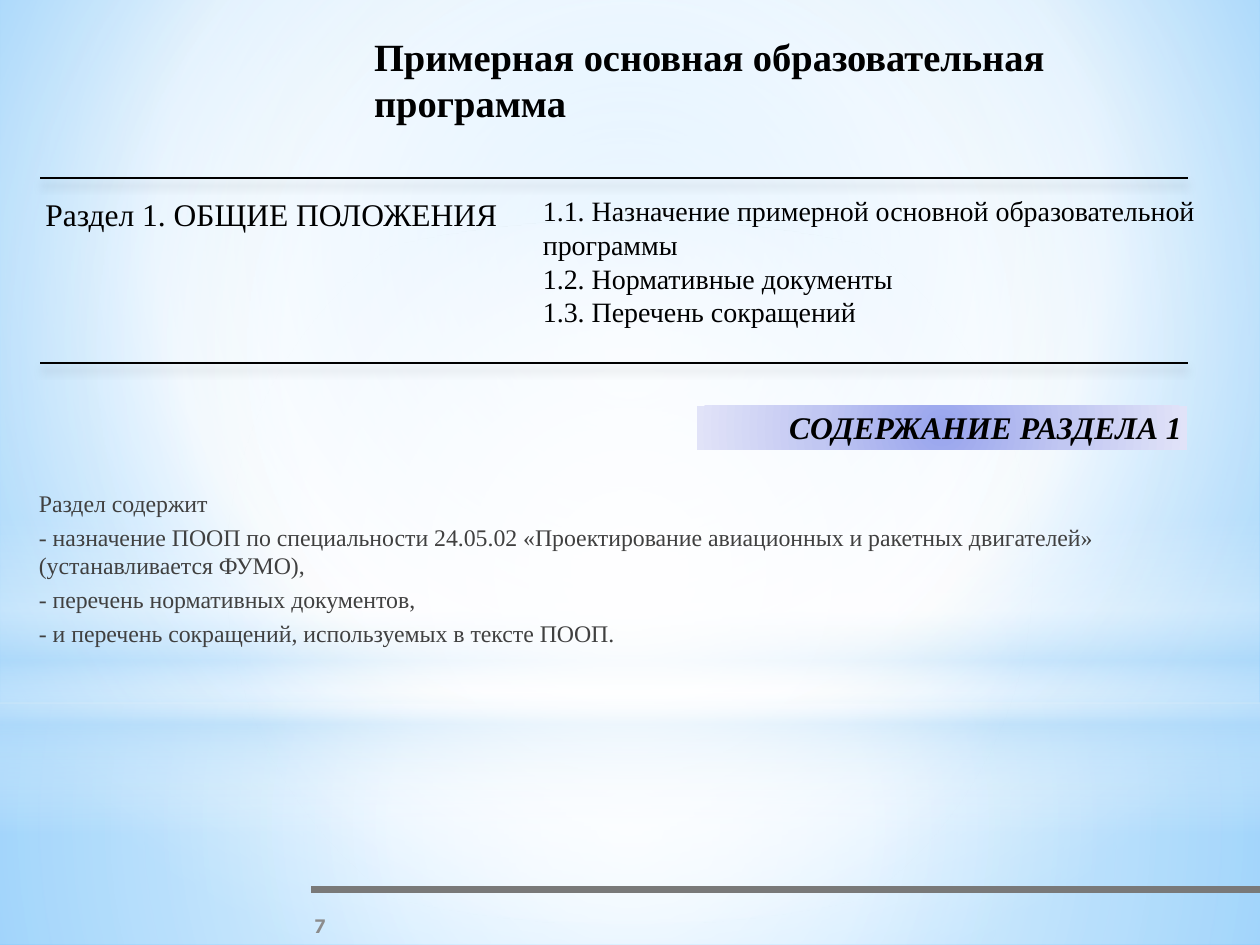
from dataclasses import dataclass

from lxml import etree
from pptx import Presentation
from pptx.dml.color import RGBColor
from pptx.enum.shapes import MSO_CONNECTOR, MSO_SHAPE
from pptx.enum.text import MSO_ANCHOR, PP_ALIGN
from pptx.oxml.ns import qn
from pptx.util import Inches, Pt


@dataclass(frozen=True)
class Theme:
    serif: str = "Times New Roman"
    sans: str = "Karla"
    ink: str = "000000"
    body: str = "404040"
    muted: str = "8C8C8C"
    bar: str = "797979"
    white: str = "FFFFFF"
    sky: str = "B4DCFA"
    title_size: float = 22
    section_size: float = 18
    topic_size: float = 16
    body_size: float = 13.6
    number_size: float = 12


THEME = Theme()
CENTER = (50, 50, 50, 50)
SLIM_INSETS = (0.04, 0.02, 0.04, 0.02)


def color_element(parent, color, alpha=100):
    node = etree.SubElement(parent, qn("a:srgbClr"), val=color)
    if alpha < 100:
        etree.SubElement(node, qn("a:alpha"), val=str(alpha * 1000))


def set_gradient(owner, fill, stops, focus=CENTER, angle=None):
    """Fill with (position, color, alpha) stops, radial unless an angle is given."""
    fill.gradient()
    old = owner.find(".//" + qn("a:gradFill"))
    new = etree.Element(qn("a:gradFill"), rotWithShape="1")
    stop_list = etree.SubElement(new, qn("a:gsLst"))
    for position, color, alpha in stops:
        stop = etree.SubElement(stop_list, qn("a:gs"), pos=str(position * 1000))
        color_element(stop, color, alpha)
    if angle is None:
        radial = etree.SubElement(new, qn("a:path"))
        radial.set("path", "circle")
        sides = {side: str(value * 1000) for side, value in zip("ltrb", focus)}
        etree.SubElement(radial, qn("a:fillToRect"), **sides)
    else:
        etree.SubElement(new, qn("a:lin"), ang=str(angle * 60000), scaled="0")
    old.getparent().replace(old, new)


def add_gradient_shape(page, box, stops, kind=MSO_SHAPE.RECTANGLE, angle=None):
    shape = page.shapes.add_shape(kind, *map(Inches, box))
    shape.shadow.inherit = False
    shape.line.fill.background()
    set_gradient(shape.element, shape.fill, stops, angle=angle)
    return shape


def add_rule(page, left, right, y, color, width, shadow=False):
    rule = page.shapes.add_connector(
        MSO_CONNECTOR.STRAIGHT, Inches(left), Inches(y), Inches(right), Inches(y))
    rule.line.color.rgb = RGBColor.from_string(color)
    rule.line.width = Pt(width)
    effects = etree.SubElement(rule.element.spPr, qn("a:effectLst"))
    if shadow:
        outer = etree.SubElement(
            effects, qn("a:outerShdw"), blurRad=str(Pt(5)), dist=str(Pt(4)),
            dir=str(90 * 60000), rotWithShape="0")
        color_element(outer, THEME.ink, 20)


def write_text(shape, lines, *, size, color=THEME.ink, font=THEME.serif, bold=False,
               italic=False, align=PP_ALIGN.LEFT, anchor=MSO_ANCHOR.TOP,
               insets=(0.1, 0.05, 0.1, 0.05), space_after=0):
    frame = shape.text_frame
    frame.word_wrap = True
    frame.vertical_anchor = anchor
    (frame.margin_left, frame.margin_top,
     frame.margin_right, frame.margin_bottom) = map(Inches, insets)
    for index, line in enumerate(lines):
        para = frame.paragraphs[0] if index == 0 else frame.add_paragraph()
        para.alignment = align
        para.space_after = Pt(space_after)
        span = para.add_run()
        span.text = line
        span.font.name = font
        span.font.size = Pt(size)
        span.font.bold = bold
        span.font.italic = italic
        span.font.color.rgb = RGBColor.from_string(color)


def add_text(page, box, lines, **style):
    write_text(page.shapes.add_textbox(*map(Inches, box)), lines, **style)


def add_backdrop(page, box):
    """Layer the sky glow over the box, split at the horizon."""
    left, top, width, height = box
    horizon = 5.58
    white, sky = THEME.white, THEME.sky
    set_gradient(page.element, page.background.fill,
                 [(0, "9ED5FF", 100), (60, white, 100), (100, "5BB9FF", 100)],
                 focus=(20, 10, 20, 60))
    add_gradient_shape(page, (left, top + horizon, width, height - horizon),
                       [(0, white, 91), (37, white, 76), (100, sky, 79)])
    add_gradient_shape(page, (left, top, width, horizon),
                       [(0, white, 89), (48, white, 62), (100, sky, 79)])
    add_gradient_shape(page, (left, top + 4.12, width, 2.5),
                       [(0, white, 0), (29, white, 30), (45, sky, 40),
                        (55, white, 26), (65, sky, 60), (100, white, 0)], angle=90)
    add_gradient_shape(page, (left, top + 1.75, width, horizon),
                       [(0, white, 100), (56, white, 0)], kind=MSO_SHAPE.OVAL)


def add_footer(page, box, number):
    left, top, width, height = box
    add_rule(page, left, left + width, top, THEME.bar, 4)
    add_text(page, (left - 0.93, top + 0.08, 2, height), [number],
             size=THEME.number_size, color=THEME.muted, font=THEME.sans, bold=True,
             align=PP_ALIGN.CENTER, anchor=MSO_ANCHOR.MIDDLE)


def add_section(page, box, heading, topics):
    """Set the heading beside its topics, between two rules."""
    left, top, width, height = box
    column = 3.89
    for y in (top, top + height):
        add_rule(page, left, left + width, y, THEME.ink, 1.25, shadow=True)
    add_text(page, (left, top + 0.12, column, 0.35), [heading],
             size=THEME.section_size, insets=SLIM_INSETS)
    add_text(page, (left + column, top + 0.08, 5.59, 1.18), topics,
             size=THEME.topic_size)


def add_banner(page, box, caption):
    banner = add_gradient_shape(
        page, box, [(0, "98A4ED", 100), (50, "C1C7F2", 100), (100, "E1E3F8", 100)])
    write_text(banner, [caption], size=THEME.section_size, bold=True, italic=True,
               align=PP_ALIGN.RIGHT, insets=SLIM_INSETS)


def main():
    deck = Presentation()
    deck.slide_width, deck.slide_height = Inches(10), Inches(7.5)
    page = deck.slides.add_slide(deck.slide_layouts[6])
    add_backdrop(page, (0, 0, 10, 7.5))
    add_footer(page, (2.47, 7.06, 7.58, 0.4), "7")
    add_text(page, (2.87, 0.21, 6.78, 0.84),
             ["Примерная основная образовательная программа"],
             size=THEME.title_size, bold=True)
    add_section(page, (0.32, 1.41, 9.11, 1.47), "Раздел 1. ОБЩИЕ ПОЛОЖЕНИЯ", [
        "1.1. Назначение примерной основной образовательной программы",
        "1.2. Нормативные документы",
        "1.3. Перечень сокращений",
    ])
    add_banner(page, (5.53, 3.22, 3.89, 0.35), "СОДЕРЖАНИЕ РАЗДЕЛА 1")
    add_text(page, (0.21, 3.83, 9.45, 1.26), [
        "Раздел содержит",
        "- назначение ПООП по специальности 24.05.02 «Проектирование авиационных "
        "и ракетных двигателей» (устанавливается ФУМО),",
        "- перечень нормативных документов,",
        "- и перечень сокращений, используемых в тексте ПООП.",
    ], size=THEME.body_size, color=THEME.body, space_after=3)
    deck.save("out.pptx")


if __name__ == "__main__":
    main()
